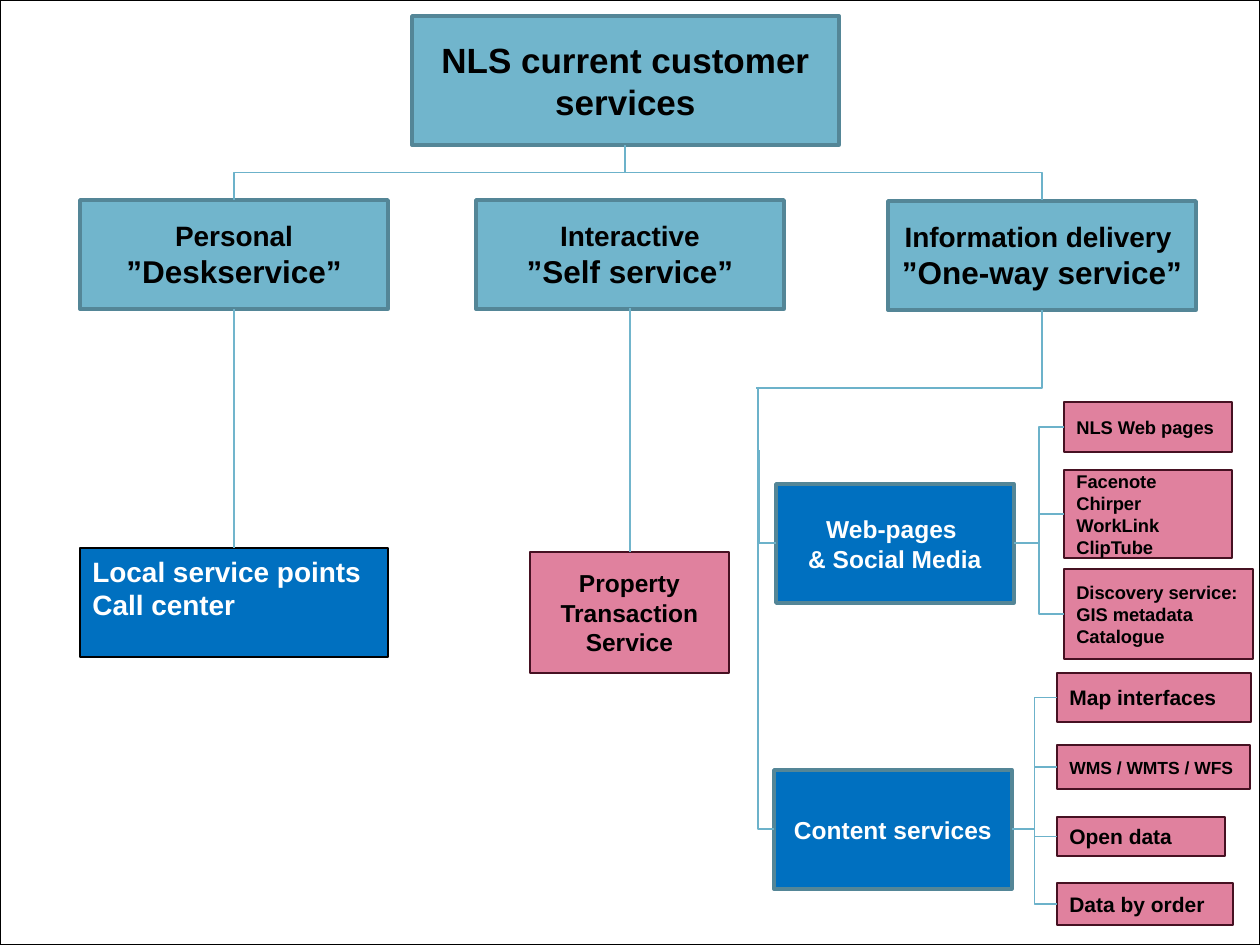
"""Build an organisation chart of the current customer services."""
from dataclasses import dataclass

from lxml.etree import SubElement
from pptx import Presentation
from pptx.dml.color import RGBColor
from pptx.enum.shapes import MSO_CONNECTOR as Link, MSO_SHAPE as Preset
from pptx.enum.text import MSO_ANCHOR as Anchor, MSO_AUTO_SIZE as Fit, PP_ALIGN as Align
from pptx.oxml.ns import qn
from pptx.util import Emu, Pt

PX = 914400 / 126


@dataclass(frozen=True)
class Look:
    fill: str
    border: str
    border_width: float
    ink: str
    align: Align = Align.CENTER


@dataclass(frozen=True)
class Theme:
    font: str = "Arial"
    link: str = "6CB2CA"
    stem: str = "71B5CC"
    hairline: float = 0.75
    title_size: float = 20
    quote_size: float = 18
    branch_size: float = 16
    group_size: float = 14
    item_size: float = 12
    small_size: float = 10.5
    tiny_size: float = 10
    frame: Look = Look("FFFFFF", "000000", 0.75, "000000")
    branch: Look = Look("71B5CC", "548697", 2, "000000")
    group: Look = Look("0070C0", "548697", 2, "FFFFFF")
    desk: Look = Look("0070C0", "000000", 0.75, "FFFFFF", Align.LEFT)
    product: Look = Look("E0819E", "461122", 0.75, "000000")
    item: Look = Look("E0819E", "461122", 0.75, "000000", Align.LEFT)


def px(value):
    return Emu(round(value * PX))


def rgb(value):
    return RGBColor.from_string(value)


class ChartPage:
    """Draws the parts of the chart on one slide in one theme."""

    def __init__(self, deck, theme):
        self.theme = theme
        self.page = deck.slides.add_slide(deck.slide_layouts[5])

    def paint(self, box, look):
        box.shadow.inherit = False
        box.fill.solid()
        box.fill.fore_color.rgb = rgb(look.fill)
        box.line.color.rgb = rgb(look.border)
        box.line.width = Pt(look.border_width)

    def label(self, box, text, look, sizes, anchor=Anchor.MIDDLE):
        frame = box.text_frame
        frame.text = text
        frame.word_wrap = True
        frame.auto_size = Fit.NONE
        frame.vertical_anchor = anchor
        for index, para in enumerate(frame.paragraphs):
            para.alignment = look.align
            for span in para.runs:
                span.font.name = self.theme.font
                span.font.size = Pt(sizes[min(index, len(sizes) - 1)])
                span.font.bold = True
                span.font.color.rgb = rgb(look.ink)

    def frame(self, width, height):
        box = self.page.shapes.add_shape(Preset.RECTANGLE, 0, 0, px(width), px(height))
        self.paint(box, self.theme.frame)

    def title(self, text, left, top, width, height):
        box = self.page.shapes.title
        box.left, box.top, box.width, box.height = map(px, (left, top, width, height))
        box.element.getparent().append(box.element)
        self.paint(box, self.theme.branch)
        self.label(box, text, self.theme.branch, [self.theme.title_size])

    def box(self, text, area, look, *sizes, anchor=Anchor.MIDDLE):
        box = self.page.shapes.add_shape(Preset.RECTANGLE, *map(px, area))
        self.paint(box, look)
        self.label(box, text, look, sizes, anchor)

    def link(self, kind, start, end, color):
        line = self.page.shapes.add_connector(kind, *map(px, (*start, *end)))
        line.line.color.rgb = rgb(color)
        line.line.width = Pt(self.theme.hairline)
        SubElement(line.element.spPr, qn("a:effectLst"))
        return line

    def stem(self, x, top, bottom):
        self.link(Link.STRAIGHT, (x, top), (x, bottom), self.theme.stem)

    def across(self, start, end):
        self.link(Link.ELBOW, start, end, self.theme.link)

    def down(self, start, end, preset="bentConnector3"):
        """Draw an elbow that leaves vertically, as a level elbow turned 90 degrees."""
        (x1, y1), (x2, y2) = start, end
        middle_x, middle_y = (x1 + x2) / 2, (y1 + y2) / 2
        half_x, half_y = (x2 - x1) / 2, (y2 - y1) / 2
        line = self.link(Link.ELBOW, (middle_x - half_y, middle_y + half_x),
                         (middle_x + half_y, middle_y - half_x), self.theme.link)
        properties = line.element.spPr
        properties.find(qn("a:xfrm")).set("rot", "5400000")
        properties.find(qn("a:prstGeom")).set("prst", preset)


def main():
    theme = Theme()
    deck = Presentation()
    deck.slide_width, deck.slide_height = px(1260), px(945)
    chart = ChartPage(deck, theme)
    chart.frame(1260, 945)
    chart.title("NLS current customer services", 412, 16, 427, 129)

    branches = [
        (80, 200, "Personal\n”Deskservice”"),
        (476, 200, "Interactive\n”Self service”"),
        (888, 201, "Information delivery \n”One-way service”"),
    ]
    for left, top, text in branches:
        chart.box(text, (left, top, 308, 109), theme.branch,
                  theme.branch_size, theme.quote_size)
    for x in (234, 1042):
        chart.down((625, 145), (x, 200))

    chart.box("Local service points\nCall center", (80, 548, 308, 109), theme.desk,
              theme.branch_size, anchor=Anchor.TOP)
    chart.box("Property\nTransaction\nService", (530, 552, 199, 121), theme.product,
              theme.group_size)
    chart.stem(234, 309, 548)
    chart.stem(630, 308, 552)

    groups = [
        ("Web-pages \n& Social Media", 776, 484, 543, [
            ("NLS Web pages", (1064, 402, 168, 50), theme.small_size),
            ("Facenote\nChirper\nWorkLink\nClipTube", (1064, 470, 168, 88), theme.small_size),
            ("Discovery service: GIS metadata Catalogue", (1064, 569, 189, 90),
             theme.small_size),
        ]),
        ("Content services", 774, 770, 829, [
            ("Map interfaces", (1057, 673, 194, 49), theme.item_size),
            ("WMS / WMTS / WFS", (1057, 745, 193, 44), theme.tiny_size),
            ("Open data", (1057, 817, 168, 39), theme.item_size),
            ("Data by order", (1057, 883, 176, 42), theme.item_size),
        ]),
    ]
    for text, left, top, hub, items in groups:
        chart.box(text, (left, top, 238, 119), theme.group, theme.group_size)
        for name, area, size in items:
            chart.box(name, area, theme.item, size)
            chart.across((left + 238, hub), (area[0], area[1] + area[3] / 2))

    trunks = [((1042, 310), (756, 388)), ((759, 450), (776, 543)), ((758, 387), (774, 829))]
    for start, end in trunks:
        chart.down(start, end, "bentConnector2")
    deck.save("out.pptx")


if __name__ == "__main__":
    main()
